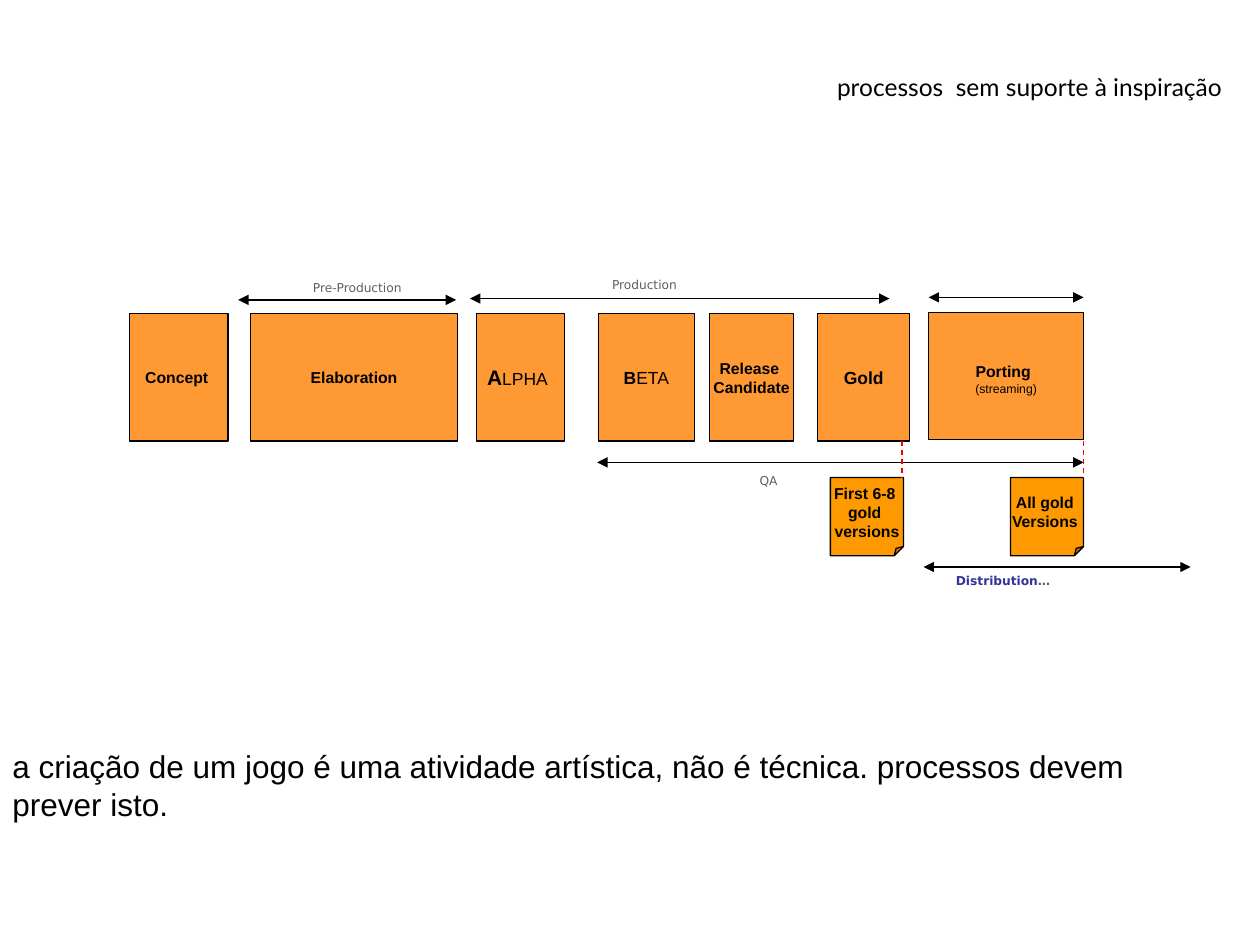
from copy import deepcopy
from pptx import Presentation, util as u
from pptx.dml.color import RGBColor
from pptx.enum import dml, shapes, text
from pptx.oxml import ns, xmlchemy as xml

hue = RGBColor.from_string
deck = Presentation()
deck.slide_width, deck.slide_height = u.Inches(10), u.Inches(7.5)
page = deck.slides.add_slide(deck.slide_layouts[6])
cell = deck.slide_width / 100


def grid(*spots):
    return [round(spot * cell) for spot in spots]


def write(frame, paras, face="Arial", size=9, bold=False, ink="000000",
          align="CENTER", anchor="MIDDLE", wrap=True):
    frame.word_wrap = wrap
    frame.vertical_anchor = text.MSO_ANCHOR[anchor]
    for n, runs in enumerate(paras):
        para = frame.paragraphs[0] if n == 0 else frame.add_paragraph()
        para.alignment = text.PP_ALIGN[align]
        for words, look in runs:
            for k, line in enumerate(words.split("\n")):
                if k:
                    para.add_line_break()
                    para._p[-1].append(deepcopy(run._r.rPr))
                if not line:
                    continue
                run = para.add_run()
                run.text = line
                font = run.font
                font.name = face
                font.size = u.Pt(look.get("size", size))
                font.bold = look.get("bold", bold)
                font.color.rgb = hue(look.get("ink", ink))


top, tall = 24.9, 10.1
stages = [
    (10.3, top, 7.8, [("Concept ", {})]),
    (19.9, top, 16.4, [("Elaboration", {})]),
    (37.8, top, 7, [("A", {"size": 12}), ("LPHA", {"size": 10, "bold": False}),
                    (" ", {"size": 12, "bold": False})]),
    (47.5, top, 7.6, [("B", {"size": 10}), ("ETA", {"size": 10, "bold": False})]),
    (56.3, top, 6.7, [("Release \nCandidate", {})]),
    (64.9, top, 7.3, [("Gold", {"size": 10})]),
    (73.7, 24.8, 12.3, [("Porting", {}), (" \n", {"size": 12, "bold": False}),
                        ("(streaming)", {"size": 7, "bold": False})]),
]
notes = [
    (65.9, [[("First 6-8 ", {})], [("gold \nversions", {})]]),
    (80.2, [[("All gold ", {})], [("Versions ", {})]]),
]
kind = shapes.MSO_SHAPE
blocks = [(kind.FLOWCHART_PROCESS, (x, y, wide, tall), "FF9933", [runs])
          for x, y, wide, runs in stages]
blocks += [(kind.FOLDED_CORNER, (x, 37.9, 5.8, 6.2), "FF9900", paras)
           for x, paras in notes]

for form, place, fill, paras in blocks:
    block = page.shapes.add_shape(form, *grid(*place))
    block.shadow.inherit = False
    block.fill.solid()
    block.fill.fore_color.rgb = hue(fill)
    block.line.color.rgb = hue("000000")
    block.line.width = u.Pt(0.75)
    if form == kind.FOLDED_CORNER:
        fold = xml.OxmlElement("a:gd")
        fold.set("name", "adj")
        fold.set("fmla", "val 12500")
        block._element.find(".//" + ns.qn("a:avLst")).append(fold)
    write(block.text_frame, paras, bold=True, wrap=False)

spans = [(18.9, 36.2, 23.8), (37.3, 70.6, 23.7), (73.7, 86, 23.6),
         (47.4, 86, 36.7), (73.3, 94.5, 45)]
lines = [((left, y, right, y), "000000", True) for left, right, y in spans]
lines += [((x, 35, x, 37.9), "FF0000", False) for x in (71.6, 86)]

for ends, ink, arrow in lines:
    line = page.shapes.add_connector(shapes.MSO_CONNECTOR.STRAIGHT, *grid(*ends))
    line.line.color.rgb = hue(ink)
    line.line.width = u.Pt(0.75)
    if arrow:
        for tip in ("a:headEnd", "a:tailEnd"):
            mark = xml.OxmlElement(tip)
            mark.set("type", "triangle")
            line.line._get_or_add_ln().append(mark)
    else:
        line.line.dash_style = dml.MSO_LINE.DASH
    line._element.find(ns.qn("p:spPr")).append(xml.OxmlElement("a:effectLst"))

tag = dict(face="DejaVu Sans", size=7, ink="5F5F5F")
labels = [
    ((21.9, 21.7, 12.9, 2.2), [("Pre-Production", {})], tag),
    ((45, 21.5, 12.3, 2.2), [("Production", {})], tag),
    ((56.8, 37, 8.4, 2.2), [("QA", {})], tag),
    ((74.5, 45, 10.2, 2.2),
     [("Distribution", {"ink": "333399"}), ("…", {})],
     dict(tag, bold=True)),
    ((42.1, 5.2, 55.9, 3.3), [("processos  sem suporte à inspiração", {})],
     dict(face="Lato", size=14, align="RIGHT", anchor="TOP")),
    ((0, 58.8, 95.7, 7.1),
     [("a criação de um jogo é uma atividade artística, não é técnica. "
       "processos devem prever isto.", {})],
     dict(size=18, align="LEFT", anchor="TOP")),
]
for place, runs, look in labels:
    label = page.shapes.add_textbox(*grid(*place))
    write(label.text_frame, [runs], **look)

deck.save("out.pptx")
